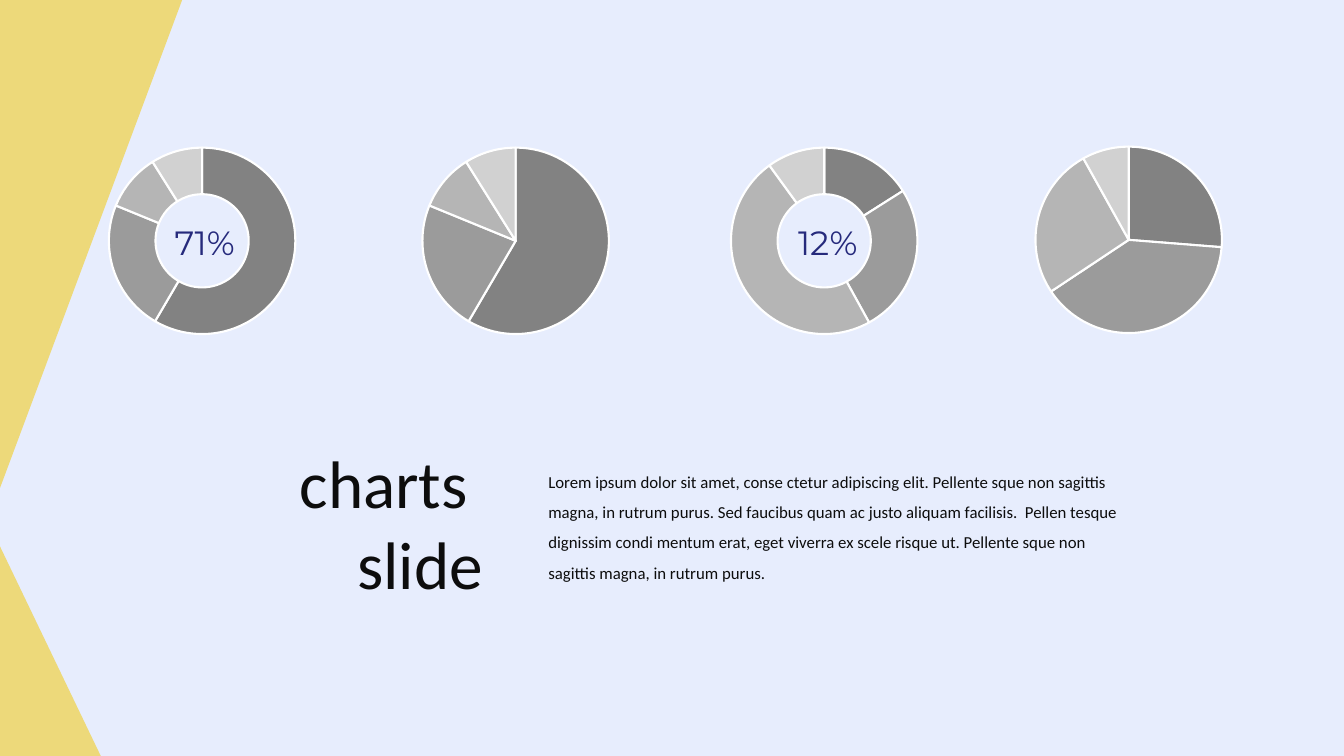
from dataclasses import dataclass

from lxml.etree import SubElement as Sub
from pptx import Presentation
from pptx.chart.data import CategoryChartData as Data
from pptx.dml.color import RGBColor as Rgb
from pptx.enum.chart import XL_CHART_TYPE as Kind
from pptx.enum.shapes import MSO_SHAPE as Form
from pptx.enum.text import MSO_AUTO_SIZE as Fit, PP_ALIGN as Align
from pptx.oxml.ns import qn
from pptx.util import Inches, Pt


@dataclass(frozen=True)
class Theme:
    back: str = "E7EDFD"
    gold: str = "EDD97A"
    ink: str = "0D0D0D"
    navy: str = "262A7C"
    black: str = "000000"
    white: str = "FFFFFF"
    grays: tuple = ("828282", "9B9B9B", "B5B5B5", "D1D1D1")
    body: str = "Calibri"
    accent: str = "Montserrat"
    title: int = 48
    figure: int = 24
    text: int = 12
    label: int = 10


def style(font, name, size, color):
    font.name = name
    font.size = Pt(size)
    font.color.rgb = Rgb.from_string(color)


def write(frame, text, *, name, size, color, align=Align.LEFT, space=None):
    for i, line in enumerate(text.split("\n")):
        para = frame.paragraphs[0] if i == 0 else frame.add_paragraph()
        para.alignment = align
        para.line_spacing = space
        run = para.add_run()
        run.text = line
        style(run.font, name, size, color)


class Page:
    def __init__(self, slide, theme):
        self.slide = slide
        self.theme = theme
        fill = slide.background.fill
        fill.solid()
        fill.fore_color.rgb = Rgb.from_string(theme.back)

    def wedge(self, box, turned=False):
        shape = self.slide.shapes.add_shape(Form.RIGHT_TRIANGLE, *map(Inches, box))
        shape.shadow.inherit = False
        shape.fill.solid()
        shape.fill.fore_color.rgb = Rgb.from_string(self.theme.gold)
        shape.line.fill.background()
        if turned:
            shape.rotation = 180
            shape.element.spPr.xfrm.set("flipH", "1")

    def text(self, box, text, **form):
        frame = self.slide.shapes.add_textbox(*map(Inches, box)).text_frame
        frame.word_wrap = True
        frame.auto_size = Fit.SHAPE_TO_FIT_TEXT
        write(frame, text, **form)

    def chart(self, kind, box, vals, span=1.85):
        data = Data()
        data.categories = ["1", "2", "3", "4"]
        data.add_series("Series 1", vals)
        chart = self.slide.shapes.add_chart(kind, *map(Inches, box), data).chart
        style(chart.font, self.theme.body, self.theme.label, self.theme.black)
        chart.has_legend = False
        chart.has_title = False
        plot = chart.plots[0]
        plot.vary_by_categories = True
        plot.has_data_labels = False
        for i, gray in enumerate(self.theme.grays):
            part = plot.series[0].points[i].format
            part.fill.solid()
            part.fill.fore_color.rgb = Rgb.from_string(gray)
            part.line.color.rgb = Rgb.from_string(self.theme.white)
            part.line.width = Pt(1.5)
        self.place(chart, span / box[2], span / box[3])

    def place(self, chart, wide, high):
        area = chart.element.find(".//" + qn("c:plotArea"))
        for old in area.findall(qn("c:layout")):
            area.remove(old)
        layout = Sub(area, qn("c:layout"))
        area.insert(0, layout)
        manual = Sub(layout, qn("c:manualLayout"))
        rules = {
            "layoutTarget": "inner", "xMode": "edge", "yMode": "edge",
            "x": (1 - wide) / 2, "y": (1 - high) / 2, "w": wide, "h": high,
        }
        for tag, val in rules.items():
            Sub(manual, qn("c:" + tag)).set("val", str(val))
        for hole in area.iter(qn("c:holeSize")):
            hole.set("val", "75")


def main():
    deck = Presentation()
    deck.slide_width = Inches(13.33)
    deck.slide_height = Inches(7.5)
    theme = Theme()
    page = Page(deck.slides.add_slide(deck.slide_layouts[6]), theme)

    page.wedge((0, 5.42, 1, 2.08))
    page.wedge((0, -0.01, 1.81, 4.85), turned=True)

    base = {"name": theme.body, "color": theme.ink}
    page.text((2.12, 4.33, 2.77, 1.72), "charts \nslide",
              size=theme.title, align=Align.RIGHT, **base)
    page.text(
        (5.34, 4.53, 5.87, 1.31),
        "Lorem ipsum dolor sit amet, conse ctetur adipiscing elit. "
        "Pellente sque non sagittis magna, in rutrum purus. "
        "Sed faucibus quam ac justo aliquam facilisis.  "
        "Pellen tesque dignissim condi mentum erat, eget viverra ex "
        "scele risque ut. Pellente sque non sagittis magna, in rutrum purus.",
        size=theme.text, space=1.5, **base)

    charts = [
        (Kind.DOUGHNUT, (0.62, 1.33, 2.77, 2.12), (59, 23, 10, 9)),
        (Kind.PIE, (3.71, 1.33, 2.81, 2.12), (59, 23, 10, 9)),
        (Kind.DOUGHNUT, (6.79, 1.33, 2.77, 2.12), (16, 26, 48, 10)),
        (Kind.PIE, (9.79, 1.32, 2.81, 2.12), (26, 39, 26, 8)),
    ]
    for kind, box, vals in charts:
        page.chart(kind, box, vals)

    for left, text in ((7.69, "12%"), (1.51, "71%")):
        page.text((left, 2.15, 1.04, 0.5), text, name=theme.accent,
                  size=theme.figure, color=theme.navy, align=Align.CENTER)

    deck.save("out.pptx")


if __name__ == "__main__":
    main()
